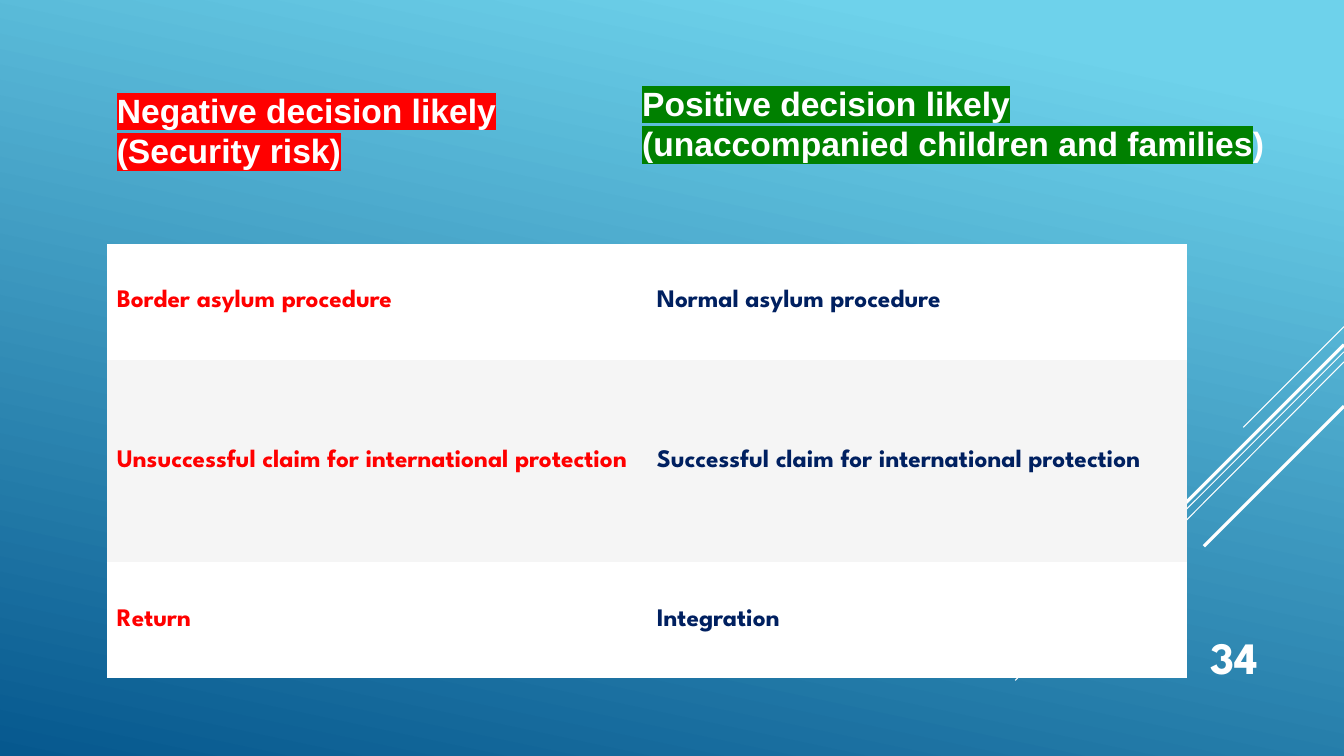
import lxml.etree
import pptx
import pptx.dml.color
import pptx.enum.shapes
import pptx.enum.text
import pptx.oxml.ns
import pptx.util

Inches = pptx.util.Inches
Pt = pptx.util.Pt
qn = pptx.oxml.ns.qn
ANCHOR = pptx.enum.text.MSO_ANCHOR
ALIGN = pptx.enum.text.PP_ALIGN

WHITE, RED, GREEN, NAVY, GREY = "FFFFFF", "FF0000", "008000", "002060", "F5F5F5"
NO_GRID_STYLE = "{2D5ABB26-0587-4C30-8999-92F81FD0307C}"

# x1, y1, x2, y2, width in points
DIAGONALS = [
    (13.33, 3.24, 12.33, 4.24, 0.75),
    (13.33, 3.49, 10.07, 6.75, 0.75),
    (13.33, 3.59, 11.26, 5.67, 0.75),
    (13.33, 3.42, 11.42, 5.33, 2.25),
    (13.33, 4.03, 11.94, 5.42, 2.25),
]
OUTCOMES = [
    ("Border asylum procedure", "Normal asylum procedure"),
    ("Unsuccessful claim for international protection",
     "Successful claim for international protection"),
    ("Return", "Integration"),
]
ROW_HEIGHTS = [1.15, 2.01, 1.15]


def rgb(color):
    return pptx.dml.color.RGBColor.from_string(color)


def style(p, size, font, color):
    p.font.size = Pt(size)
    p.font.name = font
    p.font.bold = True
    p.font.color.rgb = rgb(color)


def highlight(r, color):
    mark = lxml.etree.SubElement(r.font._element, qn("a:highlight"))
    lxml.etree.SubElement(mark, qn("a:srgbClr"), val=color)


def set_background(s):
    fill = s.background.fill
    fill.gradient()
    fill.gradient_angle = 360 - 102
    for stop, (position, color) in zip(
            fill.gradient_stops, [(0.1, "6ED2EB"), (1, "06588E")]):
        stop.position = position
        stop.color.rgb = rgb(color)


def add_diagonal(s, x1, y1, x2, y2, width):
    line = s.shapes.add_connector(
        pptx.enum.shapes.MSO_CONNECTOR.STRAIGHT,
        Inches(x1), Inches(y1), Inches(x2), Inches(y2))
    line.line.color.rgb = rgb(WHITE)
    line.line.width = Pt(width)
    lxml.etree.SubElement(line._element.spPr, qn("a:effectLst"))


def add_text_box(s, left, top, width, height):
    sp = s.shapes.add_textbox(
        Inches(left), Inches(top), Inches(width), Inches(height))
    sp.text_frame.word_wrap = True
    return sp.text_frame


def add_heading(s, left, top, lines, color, tail=""):
    """Highlighted lines, followed by a tail without highlight."""
    tf = add_text_box(s, left, top, 6.68, 0.91)
    tf.auto_size = pptx.enum.text.MSO_AUTO_SIZE.SHAPE_TO_FIT_TEXT
    p = tf.paragraphs[0]
    style(p, 24, "Arial", WHITE)
    for i, line in enumerate(lines):
        if i:
            p.add_line_break()
        r = p.add_run()
        r.text = line
        highlight(r, color)
    if tail:
        p.add_run().text = tail


def add_page_number(s, number):
    tf = add_text_box(s, 11.33, 6.1, 1.25, 0.73)
    tf.vertical_anchor = ANCHOR.BOTTOM
    p = tf.paragraphs[0]
    p.text = number
    p.alignment = ALIGN.RIGHT
    style(p, 32, "League Spartan", WHITE)


def add_outcome_table(s):
    frame = s.shapes.add_table(
        len(OUTCOMES), 2, Inches(1.06), Inches(2.42),
        Inches(10.71), Inches(sum(ROW_HEIGHTS)))
    table = frame.table
    table.first_row = table.horz_banding = False
    table._tbl.tblPr.find(qn("a:tableStyleId")).text = NO_GRID_STYLE
    for i, (texts, height) in enumerate(zip(OUTCOMES, ROW_HEIGHTS)):
        table.rows[i].height = Inches(height)
        for j, (text, color) in enumerate(zip(texts, (RED, NAVY))):
            cell = table.cell(i, j)
            cell.fill.solid()
            cell.fill.fore_color.rgb = rgb(GREY if i % 2 else WHITE)
            cell.vertical_anchor = ANCHOR.MIDDLE
            cell.text = text
            style(cell.text_frame.paragraphs[0], 18, "League Spartan", color)


def main():
    prs = pptx.Presentation()
    prs.slide_width, prs.slide_height = Inches(13.33), Inches(7.5)
    s = prs.slides.add_slide(prs.slide_layouts.get_by_name("Blank"))
    set_background(s)
    for diagonal in DIAGONALS:
        add_diagonal(s, *diagonal)
    add_page_number(s, "34")
    add_heading(s, 1.06, 0.84,
                ["Negative decision likely", "(Security risk)"], RED)
    add_heading(s, 6.27, 0.77,
                ["Positive decision likely",
                 "(unaccompanied children and families"], GREEN, tail=")")
    add_outcome_table(s)
    prs.save("out.pptx")


if __name__ == "__main__":
    main()
